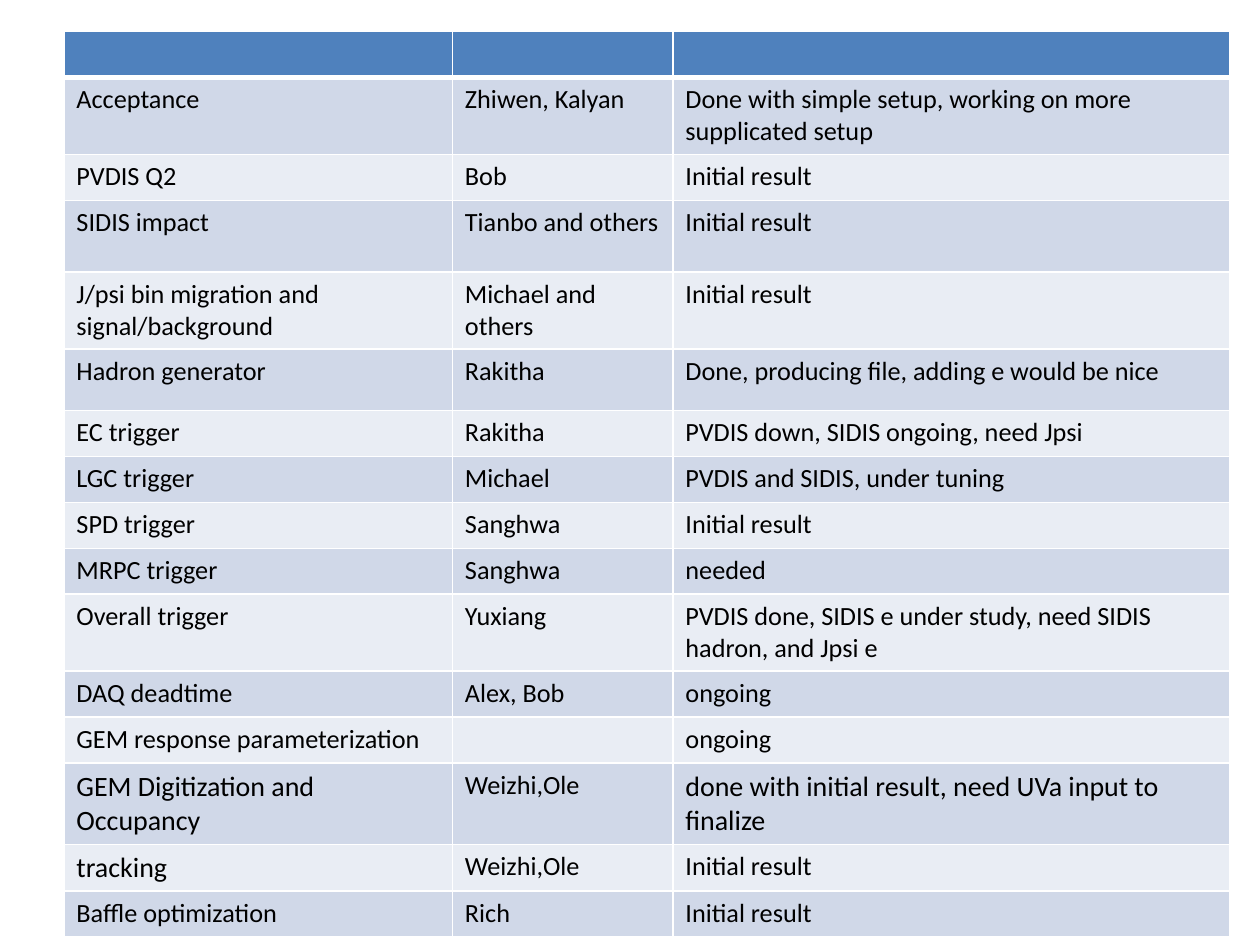
from pptx import Presentation
from pptx.dml.color import RGBColor as RGB
from pptx.oxml.xmlchemy import OxmlElement as Element
from pptx.util import Pt

HEADER, BANDS, LINE = "4F81BD", ("E9EDF4", "D0D8E8"), "FFFFFF"
BODY, LARGE = 15, 16
COLUMN_WIDTHS = 222, 126, 318
ROW_HEIGHT = 26.3
TALL_ROWS = {1: 41, 3: 41, 4: 41, 5: 35, 10: 41, 13: 43}
LARGE_CELLS = {(13, 0), (13, 2), (14, 0)}

ROWS = [
    ("", "", ""),
    ("Acceptance", "Zhiwen, Kalyan",
     "Done with simple setup, working on more supplicated setup"),
    ("PVDIS Q2", "Bob", "Initial result"),
    ("SIDIS impact", "Tianbo and others", "Initial result"),
    ("J/psi bin migration and signal/background", "Michael and others",
     "Initial result"),
    ("Hadron generator", "Rakitha",
     "Done, producing file, adding e would be nice"),
    ("EC trigger", "Rakitha", "PVDIS down, SIDIS ongoing, need Jpsi"),
    ("LGC trigger", "Michael", "PVDIS and SIDIS, under tuning"),
    ("SPD trigger", "Sanghwa", "Initial result"),
    ("MRPC trigger", "Sanghwa", "needed"),
    ("Overall trigger", "Yuxiang",
     "PVDIS done, SIDIS e under study, need SIDIS hadron, and Jpsi e"),
    ("DAQ deadtime", "Alex, Bob", "ongoing"),
    ("GEM response parameterization", "", "ongoing"),
    ("GEM Digitization and Occupancy", "Weizhi,Ole",
     "done with initial result, need UVa input to finalize"),
    ("tracking", "Weizhi,Ole", "Initial result"),
    ("Baffle optimization", "Rich", "Initial result"),
]


def color(value):
    return RGB.from_string(value)


class SlideBuilder:
    """Holds the text style and the current slide."""

    def __init__(self, s):
        self.s = s
        self.style = {"name": "Calibri", "size": Pt(BODY)}
        self.text_color = "000000"

    def table(self, rows, left, top):
        heights = [TALL_ROWS.get(i, ROW_HEIGHT) for i in range(len(rows))]
        frame = self.s.shapes.add_table(
            len(rows), len(COLUMN_WIDTHS), Pt(left), Pt(top),
            Pt(sum(COLUMN_WIDTHS)), Pt(sum(heights)))
        table = frame.table
        for column, width in zip(table.columns, COLUMN_WIDTHS):
            column.width = Pt(width)
        for i, (row, height) in enumerate(zip(table.rows, heights)):
            row.height = Pt(height)
            for j, cell in enumerate(row.cells):
                size = LARGE if (i, j) in LARGE_CELLS else BODY
                self.text(cell, rows[i][j], size=Pt(size))
                self.borders(cell, top=3 if i == 1 else 1,
                             bottom=3 if i == 0 else 1)
                cell.fill.solid()
                cell.fill.fore_color.rgb = color(BANDS[i % 2] if i else HEADER)

    def text(self, cell, text, **changes):
        p = cell.text_frame.paragraphs[0]
        style = {**self.style, **changes}
        if not text:
            # The end mark keeps an empty cell from growing its row.
            end = Element("a:endParaRPr")
            end.set("sz", str(int(style["size"].pt * 100)))
            p._p.append(end)
            return
        r = p.add_run()
        r.text = text
        for name, value in style.items():
            setattr(r.font, name, value)
        r.font.color.rgb = color(self.text_color)

    def borders(self, cell, top, bottom):
        tc_pr = cell._tc.get_or_add_tcPr()
        for side, width in {"L": 1, "R": 1, "T": top, "B": bottom}.items():
            line, fill, rgb = map(
                Element, (f"a:ln{side}", "a:solidFill", "a:srgbClr"))
            line.set("w", str(Pt(width)))
            rgb.set("val", LINE)
            fill.append(rgb)
            line.append(fill)
            tc_pr.append(line)


def main():
    prs = Presentation()
    prs.slide_width, prs.slide_height = Pt(720), Pt(540)
    builder = SlideBuilder(prs.slides.add_slide(prs.slide_layouts[6]))
    builder.table(ROWS, left=36.5, top=18)
    prs.save("out.pptx")


if __name__ == "__main__":
    main()
